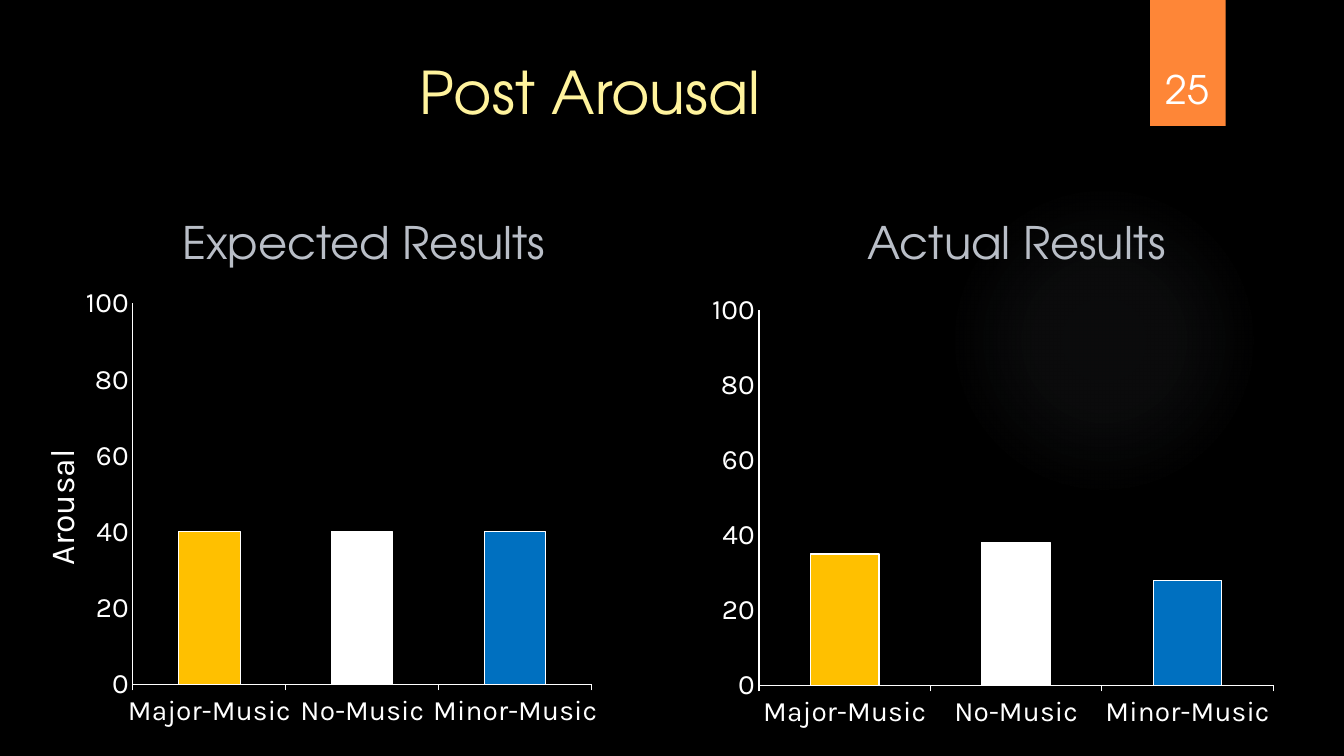
import pptx
import pptx.util
import pptx.chart.data
import pptx.dml.color
import pptx.enum.chart
import pptx.enum.shapes
import pptx.enum.text
import pptx.oxml
import lxml.etree

Pt = pptx.util.Pt
RGB = pptx.dml.color.RGBColor
ALIGN = pptx.enum.text.PP_ALIGN
ANCHOR = pptx.enum.text.MSO_ANCHOR
SHAPE = pptx.enum.shapes.MSO_SHAPE
TICK = pptx.enum.chart.XL_TICK_MARK

BLACK = RGB(0x00, 0x00, 0x00)
WHITE = RGB(0xFF, 0xFF, 0xFF)
ORANGE = RGB(0xFE, 0x86, 0x37)
YELLOW = RGB(0xFF, 0xF3, 0x9D)
GREY = RGB(0xB9, 0xBE, 0xC7)
GOLD = RGB(0xFF, 0xC0, 0x00)
BLUE = RGB(0x00, 0x70, 0xC0)
HEAD = "TeX Gyre Adventor"
LABEL = "Karla"


def write(box, text, size, color, align, anchor):
    frame = box.text_frame
    frame.word_wrap = True
    frame.auto_size = pptx.enum.text.MSO_AUTO_SIZE.NONE
    frame.vertical_anchor = anchor
    frame.text = text
    para = frame.paragraphs[0]
    para.alignment = align
    style(para.runs[0].font, size, color, HEAD)


def style(font, size, color, name):
    font.size = Pt(size)
    font.bold = False
    font.color.rgb = color
    font.name = name


deck = pptx.Presentation()
deck.slide_width, deck.slide_height = Pt(960), Pt(540)
slide = deck.slides.add_slide(deck.slide_layouts[5])
slide.background.fill.solid()
slide.background.fill.fore_color.rgb = BLACK
shapes = slide.shapes

# Faint round glow
glow = shapes.add_shape(SHAPE.OVAL, Pt(677.5), Pt(131.8), Pt(221.8), Pt(221.8))
glow.shadow.inherit = False
glow.line.fill.background()
stops = "".join(
    f'<a:gs pos="{pos}000"><a:srgbClr val="969EAB">'
    f'<a:alpha val="{alpha}000"/></a:srgbClr></a:gs>'
    for pos, alpha in [(0, 7), (36, 6), (69, 0), (100, 0)])
grad = pptx.oxml.parse_xml(
    '<a:gradFill xmlns:a="http://schemas.openxmlformats.org/drawingml/2006/main">'
    f'<a:gsLst>{stops}</a:gsLst><a:path path="circle">'
    '<a:fillToRect l="50000" t="50000" r="50000" b="50000"/></a:path></a:gradFill>')
glow.element.spPr.insert(2, grad)

# Page tab
tab = shapes.add_shape(SHAPE.RECTANGLE, Pt(821.5), Pt(0), Pt(54), Pt(90))
tab.shadow.inherit = False
tab.fill.solid()
tab.fill.fore_color.rgb = ORANGE
tab.line.fill.background()
page = shapes.add_textbox(Pt(815), Pt(23), Pt(66), Pt(60.5))
write(page, "25", 28, WHITE, ALIGN.CENTER, ANCHOR.BOTTOM)

# Title
title = shapes.title
title.left, title.top, title.width, title.height = Pt(51), Pt(36), Pt(741), Pt(110)
write(title, "Post Arousal", 42, YELLOW, ALIGN.CENTER, ANCHOR.TOP)

# Chart headings
for text, left, width, align in [
        ("Expected Results", 87, 346, ALIGN.CENTER),
        ("Actual Results", 445, 395, ALIGN.RIGHT)]:
    box = shapes.add_textbox(Pt(left), Pt(150), Pt(width), Pt(45))
    write(box, text, 32, GREY, align, ANCHOR.BOTTOM)

# Column charts: left edge, values, axis title, plot area x, y, w, h
for left, vals, name, plot in [
        (24, (40, 40, 40), "Arousal", (0.17, 0.04, 0.785, 0.84)),
        (500.4, (35, 38, 28), None, (0.1, 0.055, 0.88, 0.827))]:
    data = pptx.chart.data.CategoryChartData()
    data.categories = ["Major-Music", "No-Music", "Minor-Music"]
    data.add_series("Series 1", vals)
    chart = shapes.add_chart(
        pptx.enum.chart.XL_CHART_TYPE.COLUMN_CLUSTERED,
        Pt(left), Pt(203.8), Pt(417.6), Pt(324), data).chart
    chart.has_legend = False
    chart.has_title = False
    style(chart.font, 10, WHITE, HEAD)

    # Axes
    cats, scale = chart.category_axis, chart.value_axis
    for axis, tick in [(cats, TICK.OUTSIDE), (scale, TICK.NONE)]:
        axis.has_major_gridlines = False
        axis.major_tick_mark = tick
        axis.minor_tick_mark = TICK.NONE
        axis.format.line.color.rgb = WHITE
        axis.format.line.width = Pt(0.75)
        style(axis.tick_labels.font, 20, WHITE, LABEL)
    scale.minimum_scale, scale.maximum_scale = 0, 100
    scale.major_unit = 20
    if name:
        scale.axis_title.text_frame.text = name
        run = scale.axis_title.text_frame.paragraphs[0].runs[0]
        style(run.font, 24, WHITE, LABEL)

    # Columns
    bars = chart.plots[0]
    bars.gap_width = 150
    bars.vary_by_categories = False
    row = bars.series[0]
    row.format.fill.solid()
    row.format.fill.fore_color.rgb = ORANGE
    for i, color in enumerate((GOLD, WHITE, BLUE)):
        look = row.points[i].format
        look.fill.solid()
        look.fill.fore_color.rgb = color
        look.line.color.rgb = WHITE
        look.line.width = Pt(0.75)

    # Inner plot area
    area = chart.element.chart.plotArea
    for old in area.findall(pptx.oxml.ns.qn("c:layout")):
        area.remove(old)
    modes = '<c:layoutTarget val="inner"/><c:xMode val="edge"/><c:yMode val="edge"/>'
    sizes = "".join(f'<c:{key} val="{val}"/>' for key, val in zip("xywh", plot))
    area.insert(0, pptx.oxml.parse_xml(
        '<c:layout xmlns:c="http://schemas.openxmlformats.org/drawingml/2006/chart">'
        f'<c:manualLayout>{modes}{sizes}</c:manualLayout></c:layout>'))

deck.save("out.pptx")
